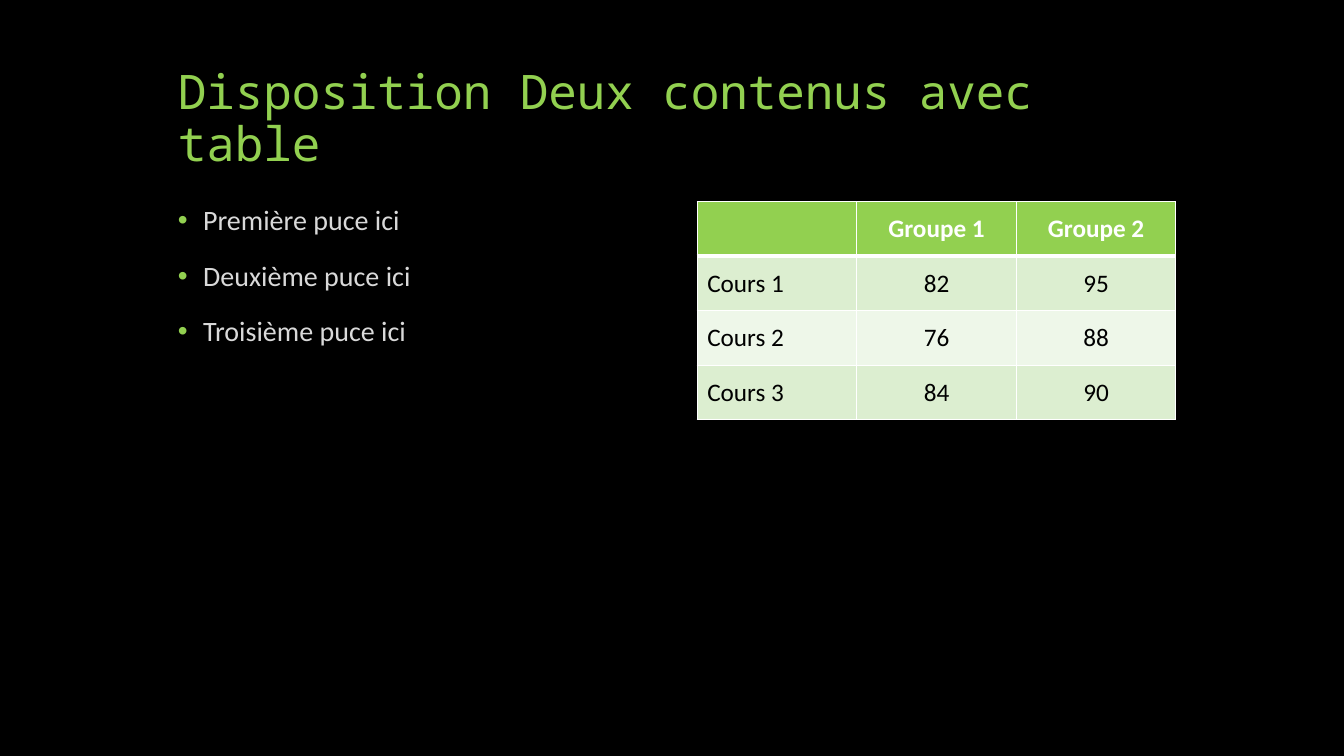
from dataclasses import dataclass

from lxml import etree
from pptx import Presentation
from pptx import util as u
from pptx.dml.color import RGBColor
from pptx.enum import text
from pptx.oxml.ns import qn


@dataclass(frozen=True)
class Theme:
    background: str = "000000"
    accent: str = "92D050"
    body: str = "D9D9D9"
    light: str = "FFFFFF"
    dark: str = "000000"
    bands: tuple = ("DCEED0", "EEF7E9")
    title_font: str = "Noto Sans Mono"
    body_font: str = "Calibri"
    title_size: int = 34
    body_size: int = 20
    table_size: int = 18


def px(length):
    return u.Emu(length * 9525)


class SlideBuilder:
    def __init__(self, slide, theme):
        self.slide = slide
        self.theme = theme
        fill = slide.background.fill
        fill.solid()
        fill.fore_color.rgb = RGBColor.from_string(theme.background)

    def style(self, paragraph, font_name, size, color, bold=False):
        for run in paragraph.runs:
            run.font.name = font_name
            run.font.size = u.Pt(size)
            run.font.bold = bold
            run.font.color.rgb = RGBColor.from_string(color)

    def text_box(self, left, top, width, height, content, anchor):
        shape = self.slide.shapes.add_textbox(px(left), px(top), px(width), px(height))
        frame = shape.text_frame
        frame.word_wrap = True
        frame.vertical_anchor = anchor
        frame.text = content
        for paragraph in frame.paragraphs:
            paragraph.line_spacing = 0.9
        return frame

    def title(self, left, top, width, height, content):
        theme = self.theme
        frame = self.text_box(left, top, width, height, content, text.MSO_ANCHOR.BOTTOM)
        self.style(frame.paragraphs[0], theme.title_font, theme.title_size, theme.accent)

    def bullets(self, left, top, width, height, items):
        theme = self.theme
        frame = self.text_box(left, top, width, height, "\n".join(items), text.MSO_ANCHOR.TOP)
        for paragraph in frame.paragraphs:
            paragraph.space_before = u.Pt(18)
            self.style(paragraph, theme.body_font, theme.body_size, theme.body)
            properties = paragraph._p.get_or_add_pPr()
            properties.set("marL", str(px(24)))
            properties.set("indent", str(px(-24)))
            color = etree.SubElement(properties, qn("a:buClr"))
            etree.SubElement(color, qn("a:srgbClr"), val=theme.accent)
            etree.SubElement(properties, qn("a:buFont"), typeface="Arial")
            etree.SubElement(properties, qn("a:buChar"), char="•")

    def borders(self, cell, widths):
        properties = cell._tc.get_or_add_tcPr()
        for position, (side, width) in enumerate(widths.items()):
            line = etree.Element(qn(f"a:ln{side}"), w=str(u.Pt(width)))
            fill = etree.SubElement(line, qn("a:solidFill"))
            etree.SubElement(fill, qn("a:srgbClr"), val=self.theme.light)
            properties.insert(position, line)

    def table(self, left, top, column_width, row_height, rows):
        theme = self.theme
        row_count, column_count = len(rows), len(rows[0])
        table = self.slide.shapes.add_table(
            row_count, column_count, px(left), px(top),
            px(column_width * column_count), px(row_height * row_count),
        ).table
        for row_index, values in enumerate(rows):
            header = row_index == 0
            fill_color = theme.accent if header else theme.bands[(row_index - 1) % 2]
            text_color = theme.light if header else theme.dark
            widths = {"L": 1, "R": 1, "T": 3 if row_index == 1 else 1, "B": 3 if header else 1}
            for column_index, value in enumerate(values):
                cell = table.cell(row_index, column_index)
                cell.text_frame.text = value
                cell.vertical_anchor = text.MSO_ANCHOR.MIDDLE
                cell.fill.solid()
                cell.fill.fore_color.rgb = RGBColor.from_string(fill_color)
                paragraph = cell.text_frame.paragraphs[0]
                paragraph.alignment = text.PP_ALIGN.CENTER if column_index else text.PP_ALIGN.LEFT
                self.style(paragraph, theme.body_font, theme.table_size, text_color, header)
                self.borders(cell, widths)


def main():
    presentation = Presentation()
    presentation.slide_width = px(1280)
    presentation.slide_height = px(720)
    slide = presentation.slides.add_slide(presentation.slide_layouts[6])
    builder = SlideBuilder(slide, Theme())
    builder.title(160, 48, 960, 120, "Disposition Deux contenus avec table")
    builder.bullets(
        160, 192, 456, 448,
        ["Première puce ici", "Deuxième puce ici", "Troisième puce ici"],
    )
    builder.table(664, 192, 152, 52, [
        ["", "Groupe 1", "Groupe 2"],
        ["Cours 1", "82", "95"],
        ["Cours 2", "76", "88"],
        ["Cours 3", "84", "90"],
    ])
    presentation.save("out.pptx")


if __name__ == "__main__":
    main()
